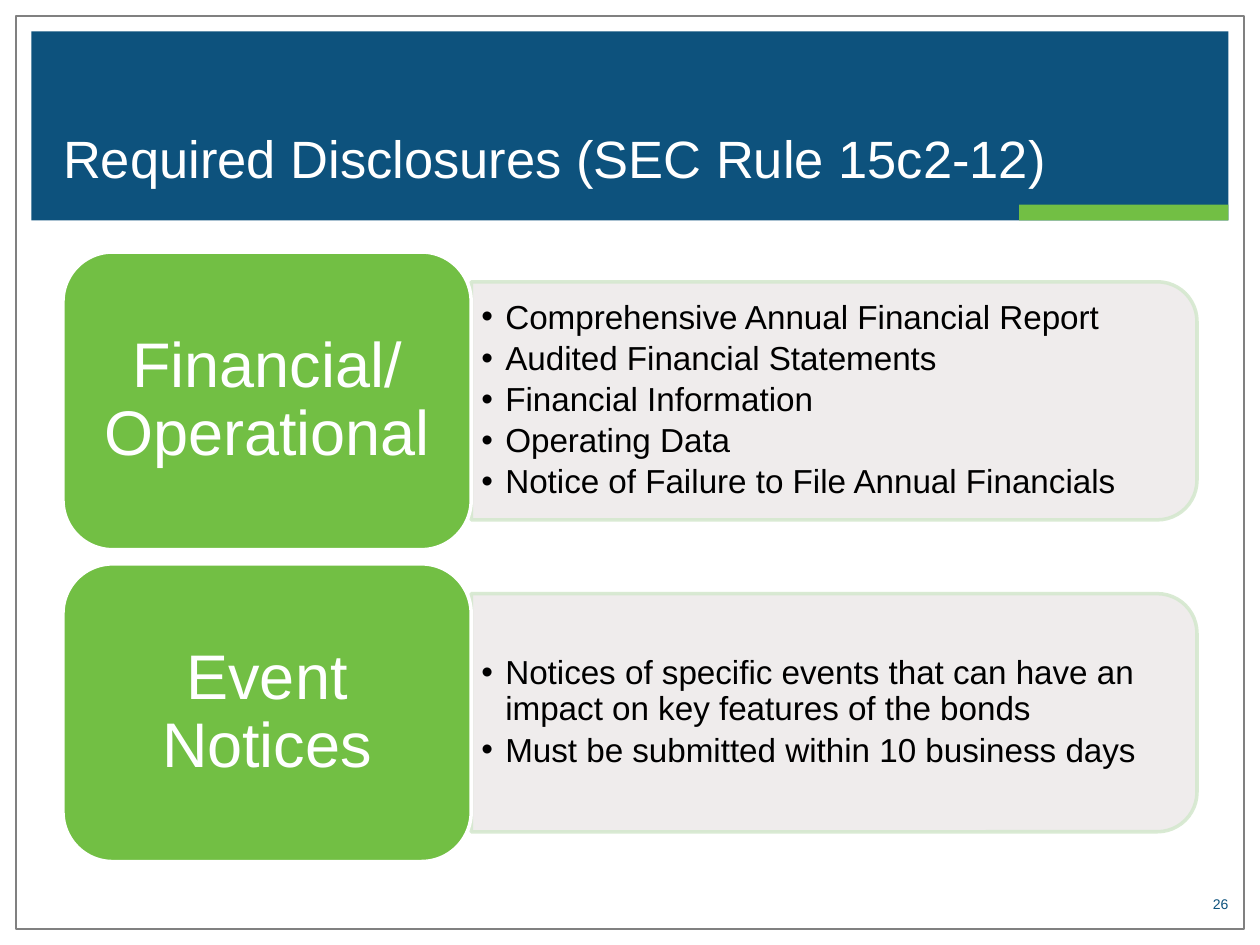
import pptx
import pptx.util
import pptx.dml.color
import pptx.enum.shapes
import pptx.enum.text
import pptx.oxml
import pptx.oxml.ns

HUES = {"navy": "0D527D", "green": "72BF44", "pale": "EEEBEA", "mint": "D5E8CF",
        "grey": "808080", "white": "FFFFFF", "black": "000000"}
COLS, ROWS = 80, 60
UNIT = pptx.util.Inches(10) // COLS
FORM = pptx.enum.shapes.MSO_SHAPE
SIDE = pptx.enum.text.PP_ALIGN
HOLD = pptx.enum.text.MSO_ANCHOR
CARDS = [
    ("Financial/ Operational", [
        "Comprehensive Annual Financial Report",
        "Audited Financial Statements",
        "Financial Information",
        "Operating Data",
        "Notice of Failure to File Annual Financials"]),
    ("Event Notices", [
        "Notices of specific events that can have an impact on key features of the bonds",
        "Must be submitted within 10 business days"]),
]


def hue(name):
    return pptx.dml.color.RGBColor.from_string(HUES[name])


def grid(*cells):
    """Turn grid columns and rows into slide lengths."""
    return [round(cell * UNIT) for cell in cells]


def place(item, box):
    item.left, item.top, item.width, item.height = grid(*box)


def fade(color, share):
    node = color._xFill.find(".//" + pptx.oxml.ns.qn("a:srgbClr"))
    alpha = pptx.oxml.parse_xml(
        f'<a:alpha {pptx.oxml.ns.nsdecls("a")} val="{share * 1000}"/>')
    node.append(alpha)


def draw(slide, form, box, fill=None, line=None, width=1, solid=100):
    shape = slide.shapes.add_shape(form, *grid(*box))
    shape.shadow.inherit = False
    if fill:
        shape.fill.solid()
        shape.fill.fore_color.rgb = hue(fill)
    else:
        shape.fill.background()
    if line:
        shape.line.color.rgb = hue(line)
        shape.line.width = pptx.util.Pt(width)
    else:
        shape.line.fill.background()
    if solid < 100:
        for part in (shape.fill, shape.line.fill):
            fade(part.fore_color, solid)
    return shape


def dot(para, indent):
    props = para._p.get_or_add_pPr()
    props.set("marL", str(indent))
    props.set("indent", str(-indent))
    space = pptx.oxml.ns.nsdecls("a")
    for tag in ('buFont {} typeface="Arial"', 'buChar {} char="•"'):
        props.append(pptx.oxml.parse_xml("<a:" + tag.format(space) + "/>"))


def write(item, lines, size, color, align=SIDE.LEFT, anchor=HOLD.MIDDLE,
          pad=(0, 0), lead=1, after=0, bullet=False):
    frame = item.text_frame
    frame.word_wrap = True
    frame.auto_size = pptx.enum.text.MSO_AUTO_SIZE.NONE
    frame.vertical_anchor = anchor
    across, down = (pptx.util.Inches(gap) for gap in pad)
    frame.margin_left = frame.margin_right = across
    frame.margin_top = frame.margin_bottom = down
    frame.text = "\n".join(lines)
    for para in frame.paragraphs:
        if bullet:
            dot(para, pptx.util.Inches(0.19))
        para.alignment = align
        para.line_spacing = lead
        para.space_before = pptx.util.Pt(0)
        para.space_after = pptx.util.Pt(after)
        para.font.size = pptx.util.Pt(size)
        para.font.name = "Arial"
        para.font.color.rgb = hue(color)


def raise_up(slide, item):
    """Bring a placeholder in front of the shapes drawn so far."""
    slide.shapes._spTree.append(item._element)


def header(slide, box):
    left, top, width, height = box
    draw(slide, FORM.RECTANGLE, box, "navy")
    tab = width * 0.175
    draw(slide, FORM.RECTANGLE, (left + width - tab, top + height - 1, tab, 1), "green")
    title = slide.shapes.title
    place(title, (left + 2, top + 1.35, width - 4, height - 3.35))
    write(title, ["Required Disclosures (SEC Rule 15c2-12)"], 30, "white",
          anchor=HOLD.BOTTOM)
    raise_up(slide, title)


def card(slide, box, name, points, body):
    left, top, width, height = box
    tile = width * 0.36
    long, deep = width - tile, height * 0.8
    start, mid = left + tile, top + height / 2
    # The bar is drawn upright about its centre, then turned on its side.
    bar = draw(slide, FORM.ROUND_2_SAME_RECTANGLE,
               (start + (long - deep) / 2, mid - long / 2, deep, long),
               "pale", "mint", 2, solid=90)
    bar.rotation = 90
    place(body, (start, mid - deep * 0.45, long - 0.75, deep * 0.9))
    write(body, points, 19, "black", pad=(0.08, 0.04), lead=0.9, after=3, bullet=True)
    raise_up(slide, body)
    label = draw(slide, FORM.ROUNDED_RECTANGLE, (left, top, tile, height),
                 "green", "white", 2)
    write(label, [name], 36, "white", SIDE.CENTER, pad=(0.15, 0.07), lead=0.9)


def footer(slide, box):
    note = slide.shapes.add_textbox(*grid(*box))
    write(note, ["26"], 8, "navy", SIDE.RIGHT, HOLD.BOTTOM)


def main():
    deck = pptx.Presentation()
    deck.slide_width, deck.slide_height = grid(COLS, ROWS)
    slide = deck.slides.add_slide(deck.slide_layouts[3])
    bodies = [item for item in slide.placeholders if item.placeholder_format.idx]
    draw(slide, FORM.RECTANGLE, (1, 1, COLS - 2, ROWS - 2), line="grey")
    header(slide, (2, 2, COLS - 4, 12))
    footer(slide, (53.4, 56.9, 24.6, 1))
    for row, ((name, points), body) in enumerate(zip(CARDS, bodies)):
        card(slide, (4, 16 + row * 19.8, COLS - 8, 18.9), name, points, body)
    deck.save("out.pptx")


if __name__ == "__main__":
    main()
